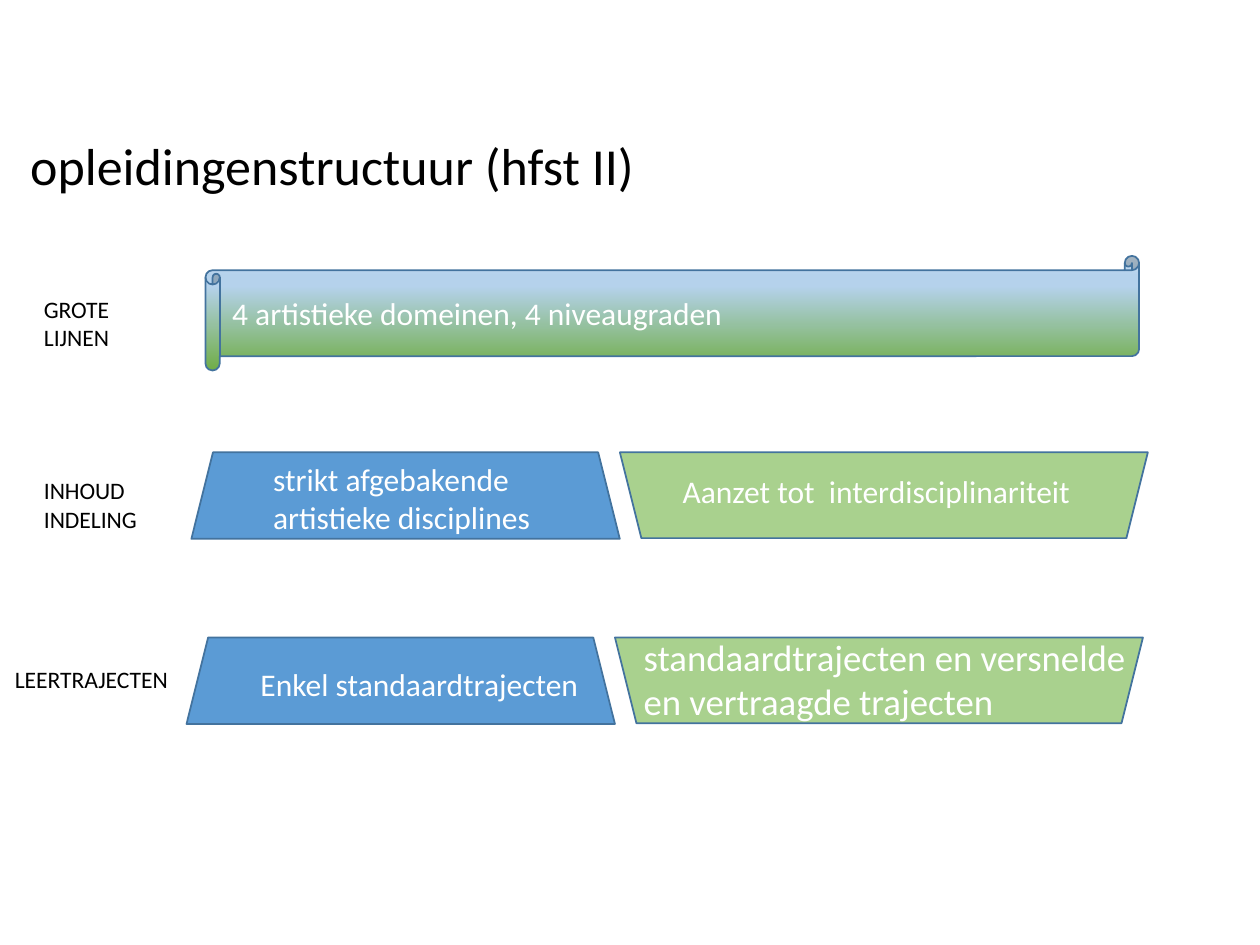
from pptx import Presentation
from pptx.dml.color import RGBColor
from pptx.enum import shapes as sh, text as tx
from pptx.oxml import parse_xml
from pptx.oxml.ns import nsdecls, qn
from pptx.util import Pt

FONT = "Calibri"
HUE = {"ink": "000000", "white": "FFFFFF", "blue": "5B9BD5",
       "green": "A9D18E", "edge": "43739E"}
FADE = [(0, "70AD47"), (74, "B5D2EC"), (83, "B5D2EC"), (100, "CEE1F2")]

# Content: boxes are left, top, width, height in points
TITLE = "opleidingenstructuur (hfst II)"
LABELS = [
    ("GROTE LIJNEN", (18, 164.9, 79.9, 40.3)),
    ("INHOUD INDELING", (18, 268.6, 88.6, 40.3)),
    ("LEERTRAJECTEN", (1.4, 376.6, 107.3, 23.8)),
]
BANNER = ("4 artistieke domeinen, 4 niveaugraden", (117.4, 146.2, 533.5, 65.5))
# Each row: left, top, then the two texts with size and box
ROWS = [
    (109.4, 258.5, [
        ("strikt afgebakende artistieke disciplines", 18, (149, 259.2, 211.7, 51.1)),
        ("Aanzet tot  interdisciplinariteit", 18, (383, 266.4, 243.4, 28.8))]),
    (106.6, 364.3, [
        ("Enkel standaardtrajecten", 18, (141.8, 376.6, 211.7, 45.4)),
        ("standaardtrajecten en versnelde en vertraagde trajecten", 21,
         (360.7, 359.3, 309.6, 74.9))]),
]
# Trapezoids of a row, side by side: width, height, colour, turn
SIDES = [(244.8, 49.4, "blue", 0), (301.7, 49, "green", 180)]


def rgb(name):
    return RGBColor.from_string(HUE[name])


def write(frame, words, size, hue):
    frame.word_wrap = True
    para = frame.paragraphs[0]
    para.alignment = tx.PP_ALIGN.LEFT
    run = para.add_run()
    run.text = words
    run.font.name, run.font.size = FONT, Pt(size)
    run.font.color.rgb = rgb(hue)
    return para


def label(home, words, size, hue, box):
    write(home.add_textbox(*map(Pt, box)).text_frame, words, size, hue)


def block(home, kind, box):
    shape = home.add_shape(kind, *map(Pt, box))
    shape.shadow.inherit = False
    shape.line.color.rgb = rgb("edge")
    shape.line.width = Pt(1)
    return shape


def fade(shape):
    shape.fill.gradient()
    shape.fill.gradient_angle = 90
    stops = shape._element.spPr.find(qn("a:gradFill")).find(qn("a:gsLst"))
    for old in list(stops):
        stops.remove(old)
    for pos, hue in FADE:
        stops.append(parse_xml(
            f'<a:gs {nsdecls("a")} pos="{pos * 1000}"><a:srgbClr val="{hue}"/></a:gs>'))


deck = Presentation()
deck.slide_width, deck.slide_height = Pt(720), Pt(540)
slide = deck.slides.add_slide(deck.slide_layouts[5])

# Title
title = slide.shapes.title
title.left, title.top, title.width, title.height = map(Pt, (10, 57, 620.6, 78.5))
title.text_frame.vertical_anchor = tx.MSO_ANCHOR.MIDDLE
write(title.text_frame, TITLE, 29.7, "ink").line_spacing = 0.9

# Row labels
for words, box in LABELS:
    label(slide.shapes, words, 13.5, "ink", box)

# Trapezoid pairs, each grouped with its text
for left, top, texts in ROWS:
    for (wide, high, hue, turn), (words, size, box) in zip(SIDES, texts):
        home = slide.shapes.add_group_shape().shapes
        trap = block(home, sh.MSO_SHAPE.TRAPEZOID, (left, top, wide, high))
        trap.rotation = turn
        trap.fill.solid()
        trap.fill.fore_color.rgb = rgb(hue)
        label(home, words, size, "white", box)
        left += wide

# Scroll banner
words, box = BANNER
scroll = block(slide.shapes, sh.MSO_SHAPE.HORIZONTAL_SCROLL, box)
fade(scroll)
scroll.text_frame.vertical_anchor = tx.MSO_ANCHOR.MIDDLE
write(scroll.text_frame, words, 18, "white")

deck.save("out.pptx")
